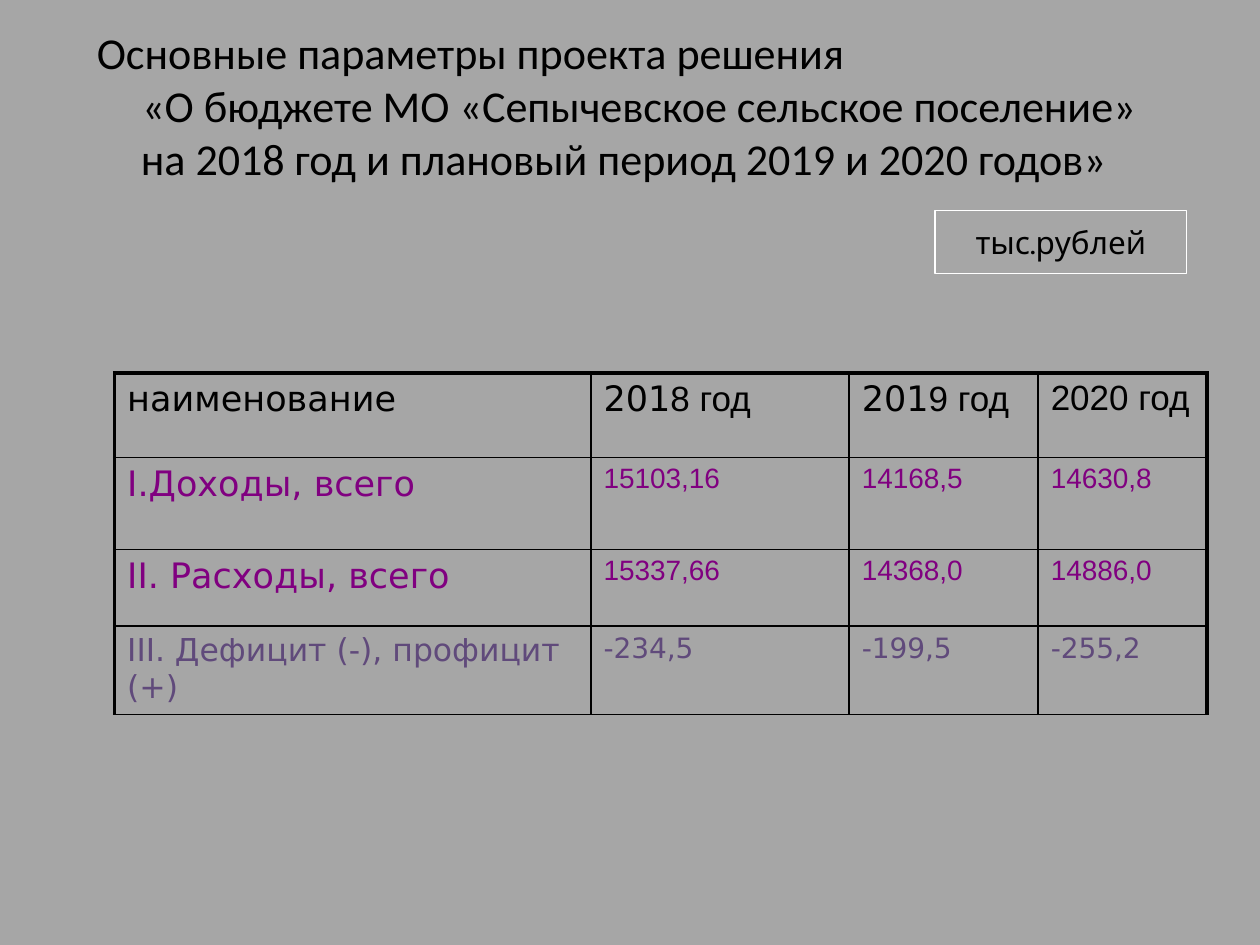
from lxml import etree
from pptx import Presentation
from pptx.dml.color import RGBColor
from pptx.enum.shapes import MSO_SHAPE
from pptx.enum.text import MSO_ANCHOR, PP_ALIGN
from pptx.oxml.ns import qn
from pptx.util import Inches, Pt

RECTANGLE = MSO_SHAPE.RECTANGLE
BOTTOM, MIDDLE = MSO_ANCHOR.BOTTOM, MSO_ANCHOR.MIDDLE
LEFT, CENTER = PP_ALIGN.LEFT, PP_ALIGN.CENTER

BLACK, WHITE, GREY = "000000", "FFFFFF", "A6A6A6"
PURPLE, VIOLET = "800080", "604A7B"
SANS, ARIAL = "DejaVu Sans", "Arial"

TITLE_LINES = [
    ("Основные параметры проекта решения", 0),
    ("«О бюджете МО «Сепычевское сельское поселение»", 0.36),
    ("на 2018 год и плановый период 2019 и 2020 годов»", 0.35),
]
COLUMN_WIDTHS = [3.78, 2.05, 1.5, 1.34]
ROW_HEIGHTS = [0.67, 0.73, 0.61, 0.68]
HEADER = [
    [("наименование", SANS)],
    [("201", SANS), ("8 год", ARIAL)],
    [("201", SANS), ("9 год", ARIAL)],
    [("2020 год", ARIAL)],
]
BUDGET_ROWS = [
    ("I.Доходы, всего", ["15103,16", "14168,5", "14630,8"], 20, ARIAL, PURPLE),
    ("II. Расходы, всего", ["15337,66", "14368,0", "14886,0"], 20, ARIAL, PURPLE),
    ("III. Дефицит (-), профицит (+)", ["-234,5", "-199,5", "-255,2"], 18, SANS, VIOLET),
]


def color(value):
    return RGBColor.from_string(value)


def add_text(paragraph, text, *, font, size, fill=BLACK, align=LEFT, indent=0):
    paragraph.alignment = align
    if indent:
        paragraph._p.get_or_add_pPr().set("marL", str(Inches(indent)))
    run = paragraph.add_run()
    run.text = text
    run.font.name = font
    run.font.size = Pt(size)
    run.font.color.rgb = color(fill)


def set_border(cell, side, width):
    line = etree.SubElement(cell._tc.get_or_add_tcPr(), qn(f"a:ln{side}"), w=str(Pt(width)))
    fill = etree.SubElement(line, qn("a:solidFill"))
    etree.SubElement(fill, qn("a:srgbClr"), val=BLACK)


class BudgetSlide:
    outer_border = 2.25
    inner_border = 1

    def __init__(self, presentation):
        self.slide = presentation.slides.add_slide(presentation.slide_layouts[6])
        background = self.slide.background.fill
        background.solid()
        background.fore_color.rgb = color(GREY)

    def title(self, lines, left, top, width, height):
        shape = self.slide.shapes.add_textbox(*map(Inches, (left, top, width, height)))
        frame = shape.text_frame
        frame.word_wrap = True
        frame.vertical_anchor = BOTTOM
        frame.margin_bottom = Inches(0.47)
        for index, (text, indent) in enumerate(lines):
            paragraph = frame.add_paragraph() if index else frame.paragraphs[0]
            add_text(paragraph, text, font="Calibri", size=25.2, indent=indent)

    def unit_label(self, text, left, top, width, height):
        shape = self.slide.shapes.add_shape(RECTANGLE, *map(Inches, (left, top, width, height)))
        shape.shadow.inherit = False
        shape.fill.background()
        shape.line.color.rgb = color(WHITE)
        shape.line.width = Pt(0.75)
        frame = shape.text_frame
        frame.word_wrap = False
        frame.vertical_anchor = MIDDLE
        add_text(frame.paragraphs[0], text, font="Karla", size=18, align=CENTER)

    def table(self, left, top):
        size = sum(COLUMN_WIDTHS), sum(ROW_HEIGHTS)
        frame = self.slide.shapes.add_table(
            len(ROW_HEIGHTS), len(COLUMN_WIDTHS), *map(Inches, (left, top, *size)))
        table = frame.table
        table.first_row = table.horz_banding = False
        for column, width in zip(table.columns, COLUMN_WIDTHS):
            column.width = Inches(width)
        for row, height in zip(table.rows, ROW_HEIGHTS):
            row.height = Inches(height)
        for column, runs in enumerate(HEADER):
            for text, font in runs:
                self.cell_text(table, 0, column, text, font=font, size=20)
        for row, (name, values, name_size, font, fill) in enumerate(BUDGET_ROWS, 1):
            self.cell_text(table, row, 0, name, font=SANS, size=name_size, fill=fill)
            for column, value in enumerate(values, 1):
                self.cell_text(table, row, column, value, font=font, size=16, fill=fill)
        self.table_borders(table)

    def cell_text(self, table, row, column, text, **style):
        add_text(table.cell(row, column).text_frame.paragraphs[0], text, **style)

    def table_borders(self, table):
        last_column = len(COLUMN_WIDTHS) - 1
        for row in range(len(ROW_HEIGHTS)):
            for column in range(len(COLUMN_WIDTHS)):
                cell = table.cell(row, column)
                outer_sides = {
                    "L": column == 0, "R": column == last_column, "T": row == 0, "B": False,
                }
                for side, is_outer in outer_sides.items():
                    set_border(cell, side, self.outer_border if is_outer else self.inner_border)
                cell.fill.background()


def main():
    presentation = Presentation()
    presentation.slide_width = Inches(10)
    presentation.slide_height = Inches(7.5)
    budget = BudgetSlide(presentation)
    budget.title(TITLE_LINES, 0.67, 1.08, 8.54, 0.85)
    budget.table(0.91, 2.96)
    budget.unit_label("тыс.рублей", 7.42, 1.67, 2, 0.5)
    presentation.save("out.pptx")


if __name__ == "__main__":
    main()
